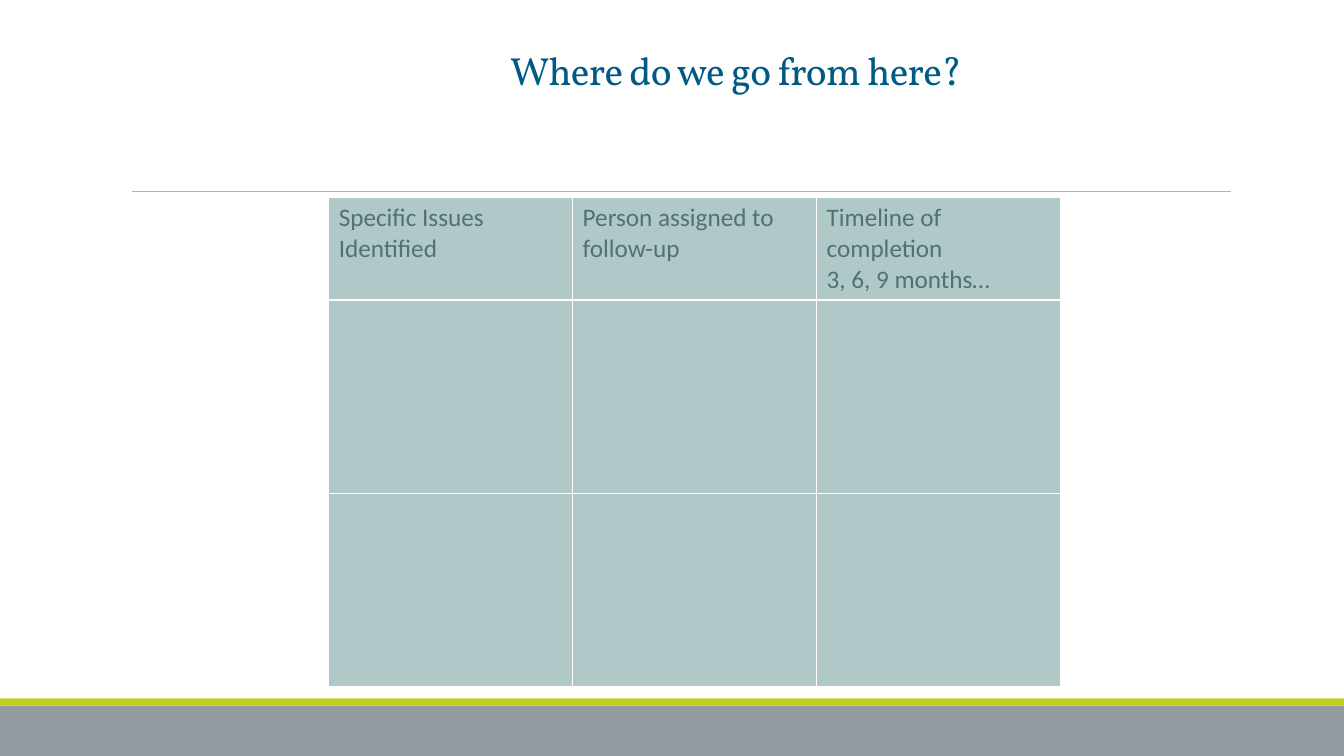
from lxml import etree
from pptx import Presentation
from pptx.dml.color import RGBColor
from pptx.enum.shapes import MSO_CONNECTOR, MSO_SHAPE
from pptx.enum.text import MSO_ANCHOR, MSO_AUTO_SIZE, PP_ALIGN
from pptx.oxml import parse_xml
from pptx.oxml.ns import nsdecls, qn
from pptx.util import Inches, Pt


def color(hex_value):
    return RGBColor.from_string(hex_value)


def write(frame, text, *, size, font, ink, line_spacing=None, tracking=None):
    """Fill a text frame, one paragraph per line of text."""
    frame.text = text
    for paragraph in frame.paragraphs:
        paragraph.alignment = PP_ALIGN.LEFT
        if line_spacing:
            paragraph.line_spacing = line_spacing
        for run in paragraph.runs:
            run.font.size = Pt(size)
            run.font.name = font
            run.font.color.rgb = color(ink)
            if tracking:
                run.font._element.set("spc", str(int(tracking * 100)))


prs = Presentation()
prs.slide_width = Inches(13.33)
prs.slide_height = Inches(7.5)
slide = prs.slides.add_slide(prs.slide_layouts[5])

# Footer bands
for top, height, fill in [(7, 0.5, "939BA1"), (6.93, 0.07, "C2CD23")]:
    band = slide.shapes.add_shape(
        MSO_SHAPE.RECTANGLE, 0, Inches(top), prs.slide_width, Inches(height))
    band.shadow.inherit = False
    band.fill.solid()
    band.fill.fore_color.rgb = color(fill)
    band.line.fill.background()

# Rule under the heading
rule = slide.shapes.add_connector(
    MSO_CONNECTOR.STRAIGHT, Inches(1.31), Inches(1.9), Inches(12.21), Inches(1.9))
rule.line.color.rgb = color("B0B4B7")
rule.line.width = Pt(0.5)
etree.SubElement(rule._element.spPr, qn("a:effectLst"))

# Heading
heading = slide.shapes.title
heading.left, heading.top = Inches(4.96), Inches(0.46)
heading.width, heading.height = Inches(6.71), Inches(0.52)
heading.text_frame.word_wrap = True
heading.text_frame.auto_size = MSO_AUTO_SIZE.NONE
heading.text_frame.vertical_anchor = MSO_ANCHOR.BOTTOM
write(heading.text_frame, "Where do we go from here?", size=28, font="Vollkorn",
      ink="005A84", line_spacing=0.85, tracking=-0.5)

# Follow-up plan
column_titles = [
    "Specific Issues Identified",
    "Person assigned to follow-up",
    "Timeline of completion\n3, 6, 9 months…",
]
row_heights = [1, 1.92, 1.92]
plan = slide.shapes.add_table(
    len(row_heights), len(column_titles),
    Inches(3.26), Inches(1.96), Inches(7.26), Inches(sum(row_heights))).table
for column in plan.columns:
    column.width = Inches(2.42)
for row, height in zip(plan.rows, row_heights):
    row.height = Inches(height)

for cell in plan.iter_cells():
    cell.fill.solid()
    cell.fill.fore_color.rgb = color("B0C8C7")
    properties = cell._tc.get_or_add_tcPr()
    for position, side in enumerate(["lnL", "lnR", "lnT", "lnB"]):
        properties.insert(position, parse_xml(
            f'<a:{side} {nsdecls("a")} w="{Pt(1)}"><a:solidFill>'
            f'<a:srgbClr val="FFFFFF"/></a:solidFill></a:{side}>'))

for cell, column_title in zip(plan.rows[0].cells, column_titles):
    write(cell.text_frame, column_title, size=18, font="Calibri", ink="507372")
    for paragraph in cell.text_frame.paragraphs:
        for run in paragraph.runs:
            run.font.bold = False

prs.save("out.pptx")
